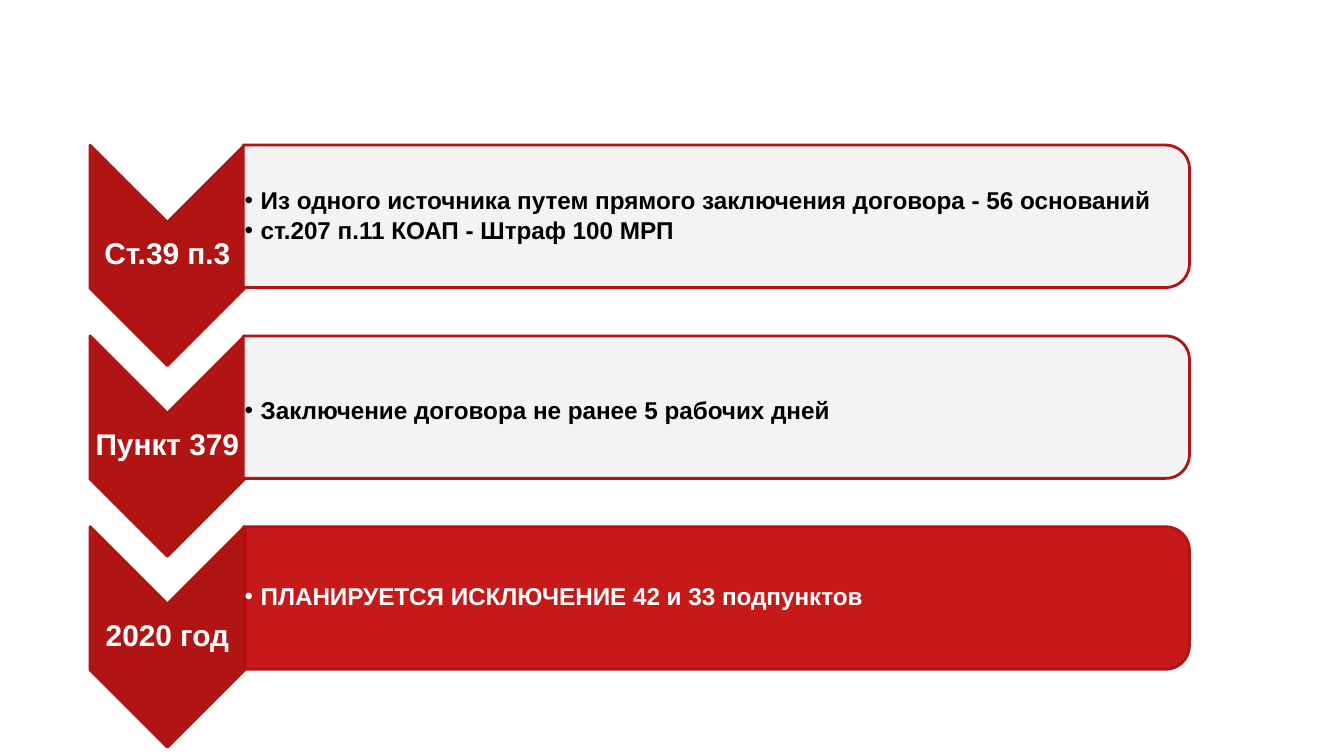
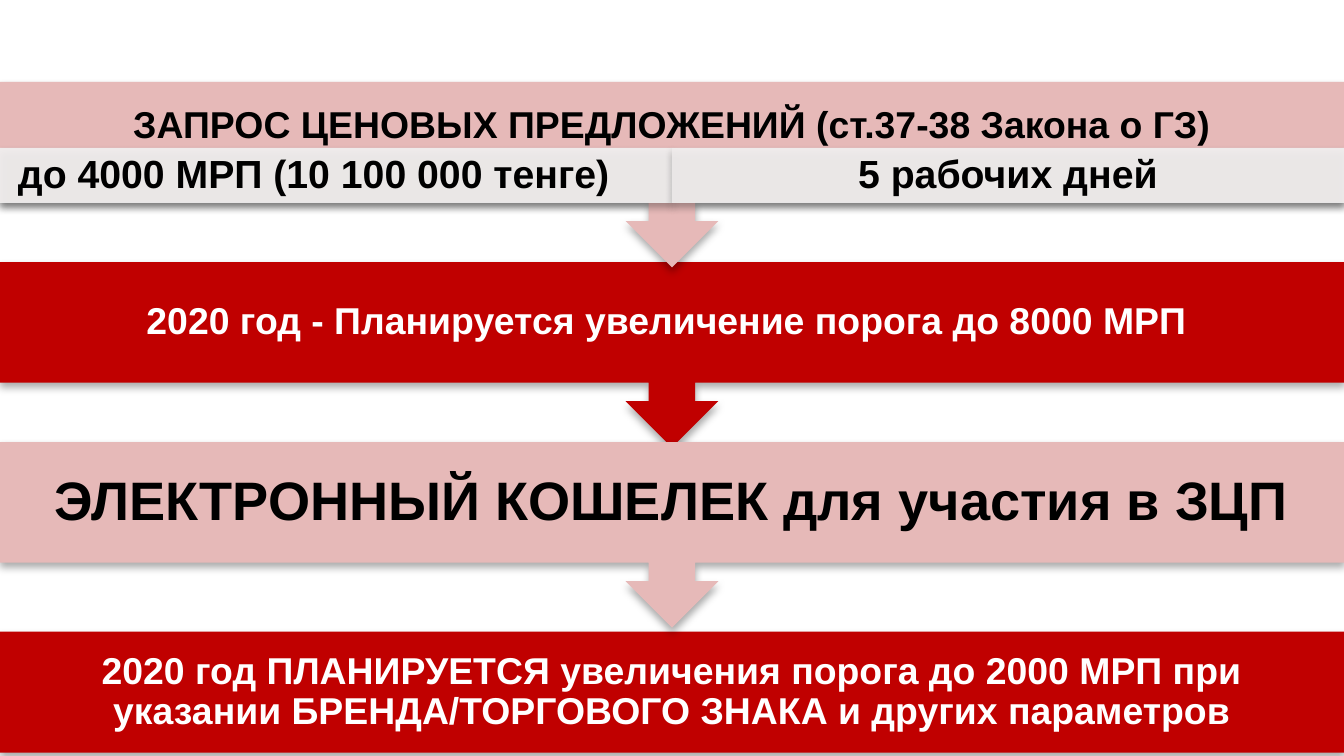
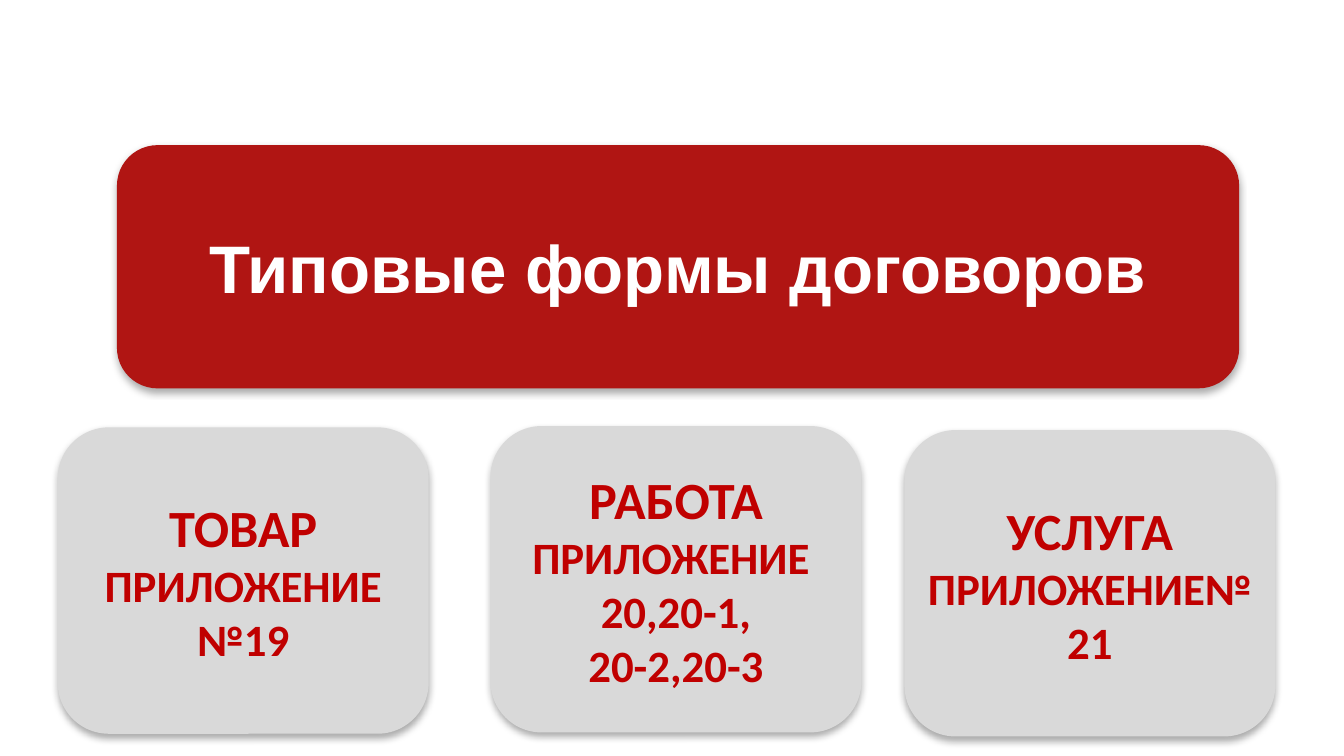
from itertools import chain, repeat

from lxml import etree
from pptx import Presentation
from pptx import util as u
from pptx.dml.color import RGBColor
from pptx.enum import shapes, text
from pptx.oxml import ns

CRIMSON, RED, PINK = "B01513", "C00000", "E6B9B8"
PALE, GREY, WHITE, BLACK = "F2F2F2", "D9D9D9", "FFFFFF", "000000"
SLIDE_WIDTH = 10

STEPS = [
    ("Ст.39 п.3", PALE, BLACK, 0, [
        "Из одного источника путем прямого заключения договора - 56 оснований",
        "ст.207 п.11 КОАП - Штраф 100 МРП",
    ]),
    ("Пункт 379", PALE, BLACK, 0.03, ["Заключение договора не ранее 5 рабочих дней"]),
    ("2020 год", RED, WHITE, 0, ["ПЛАНИРУЕТСЯ ИСКЛЮЧЕНИЕ 42 и 33 подпунктов"]),
]
STEP_TOP, STEP_PITCH, PANEL_HEIGHT = 1.08, 1.42, 1.06
CHEVRON_LENGTH, CHEVRON_WIDTH = 1.64, 1.15
STEP_LEFT, PANEL_LEFT, PANEL_WIDTH = 0.67, 1.81, 7.04

LAST_BAND = ("2020 год ПЛАНИРУЕТСЯ увеличения порога до 2000 МРП при указании "
             "БРЕНДА/ТОРГОВОГО ЗНАКА и других параметров")
ARROW_BANDS = [
    (1, "2020 год - Планируется увеличение порога до 8000 МРП ", RED, WHITE, 20, 0.9),
    (2, "ЭЛЕКТРОННЫЙ КОШЕЛЕК для участия в ЗЦП", PINK, BLACK, 29, 0.9),
    (0, "ЗАПРОС ЦЕНОВЫХ ПРЕДЛОЖЕНИЙ (ст.37-38 Закона о ГЗ)", PINK, BLACK, 20, 0.66),
]
BAND_TOP, BAND_PITCH, BAND_HEIGHT, CALLOUT_HEIGHT = 0.61, 1.34, 0.9, 1.38
LAST_BAND_TOP = 4.7
LIMITS = [("до 4000 МРП (10 100 000 тенге)", 0.33), ("5 рабочих дней", 0)]

CONTRACT_TITLE = "Типовые формы договоров"
CONTRACTS = [
    (0.43, 3.18, ["ТОВАР |ПРИЛОЖЕНИЕ №19"]),
    (3.65, 3.17, ["РАБОТА", "ПРИЛОЖЕНИЕ ", "20,20-1,", "20-2,20-3"]),
    (6.73, 3.2, ["УСЛУГА", "ПРИЛОЖЕНИЕ№ 21"]),
]


def color(value):
    return RGBColor.from_string(value)


def add_xml(parent, tag, **attributes):
    return etree.SubElement(parent, ns.qn(tag), attributes)


def add_figure(page, kind, left, top, width, height, fill, line=None,
               opacity=100, shadow=False):
    figure = page.shapes.add_shape(
        kind, u.Inches(left), u.Inches(top), u.Inches(width), u.Inches(height))
    figure.fill.solid()
    figure.fill.fore_color.rgb = color(fill)
    if opacity < 100:
        tone = figure.fill._xPr.find(".//" + ns.qn("a:srgbClr"))
        add_xml(tone, "a:alpha", val=str(opacity * 1000))
    if line:
        figure.line.color.rgb = color(line)
        figure.line.width = u.Pt(1.5)
    else:
        figure.line.fill.background()
    figure.shadow.inherit = False
    if shadow:
        effects = figure._element.spPr.find(ns.qn("a:effectLst"))
        outer = add_xml(effects, "a:outerShdw", blurRad=str(u.Pt(4)),
                        dist=str(u.Pt(2.2)), dir="5400000", rotWithShape="0")
        tone = add_xml(outer, "a:srgbClr", val=BLACK)
        add_xml(tone, "a:alpha", val="32000")
    return figure


def add_bullet(para):
    props = para._p.get_or_add_pPr()
    indent = u.Inches(0.12)
    props.set("marL", str(indent))
    props.set("indent", str(-indent))
    add_xml(props, "a:buFont", typeface="Arial")
    add_xml(props, "a:buChar", char="•")


def write(box, lines, sizes, ink, font="Arial", inset=0.01, spacing=0.9, bullets=False):
    frame = box.text_frame
    frame.word_wrap = True
    frame.vertical_anchor = text.MSO_ANCHOR.MIDDLE
    frame.margin_left = frame.margin_right = u.Inches(inset)
    frame.margin_top = frame.margin_bottom = u.Inches(inset)
    span_sizes = chain(sizes, repeat(sizes[-1]))
    for index, line in enumerate(lines):
        para = frame.add_paragraph() if index else frame.paragraphs[0]
        para.line_spacing = spacing
        para.alignment = text.PP_ALIGN.LEFT if bullets else text.PP_ALIGN.CENTER
        if bullets:
            para.space_before = u.Pt(2 if index else 0)
            add_bullet(para)
        for piece in line.split("|"):
            span = para.add_run()
            span.text = piece
            span.font.name = font
            span.font.size = u.Pt(next(span_sizes))
            span.font.bold = True
            span.font.color.rgb = color(ink)


def add_label(page, left, top, width, height, lines, sizes, ink, **style):
    box = page.shapes.add_textbox(
        u.Inches(left), u.Inches(top), u.Inches(width), u.Inches(height))
    write(box, lines, sizes, ink, **style)


def add_turned(page, kind, left, top, width, height, fill, opacity=100):
    figure = add_figure(page, kind, left + (width - height) / 2, top + (height - width) / 2,
                        height, width, fill, CRIMSON, opacity)
    figure.rotation = 90


def build_steps(page):
    for row, (name, fill, ink, drop, points) in enumerate(STEPS):
        top = STEP_TOP + row * STEP_PITCH
        add_turned(page, shapes.MSO_SHAPE.CHEVRON, STEP_LEFT, top,
                   CHEVRON_WIDTH, CHEVRON_LENGTH, CRIMSON)
        add_label(page, STEP_LEFT, top, CHEVRON_WIDTH, CHEVRON_LENGTH, [name], [16], WHITE)
        add_turned(page, shapes.MSO_SHAPE.ROUND_2_SAME_RECTANGLE, PANEL_LEFT, top,
                   PANEL_WIDTH, PANEL_HEIGHT, fill, opacity=90)
        add_label(page, PANEL_LEFT, top + drop, PANEL_WIDTH, PANEL_HEIGHT, points, [13], ink,
                  bullets=True)


def build_bands(page):
    last = add_figure(page, shapes.MSO_SHAPE.RECTANGLE, 0, LAST_BAND_TOP, SLIDE_WIDTH,
                      BAND_HEIGHT, RED, shadow=True)
    write(last, [LAST_BAND], [20], WHITE, inset=0.16)
    for row, caption, fill, ink, size, label_height in ARROW_BANDS:
        top = BAND_TOP + row * BAND_PITCH
        add_figure(page, shapes.MSO_SHAPE.DOWN_ARROW_CALLOUT, 0, top, SLIDE_WIDTH,
                   CALLOUT_HEIGHT, fill, shadow=True)
        add_label(page, 0, top, SLIDE_WIDTH, label_height, [caption], [size], ink, inset=0.16)
    width = SLIDE_WIDTH / len(LIMITS)
    for column, (caption, right_gap) in enumerate(LIMITS):
        left = column * width
        add_figure(page, shapes.MSO_SHAPE.RECTANGLE, left, 1.1, width, 0.41, PALE,
                   opacity=90, shadow=True)
        add_label(page, left, 1.1, width - right_gap, 0.41, [caption], [21], BLACK, inset=0.03)


def build_contracts(page):
    kind = shapes.MSO_SHAPE.ROUNDED_RECTANGLE
    title = add_figure(page, kind, 0.87, 1.08, 8.35, 1.81, CRIMSON, shadow=True)
    write(title, [CONTRACT_TITLE], [36], WHITE, inset=0.05, spacing=1.0)
    for left, top, lines in CONTRACTS:
        tile = add_figure(page, kind, left, top, 2.76, 2.28, GREY, shadow=True)
        write(tile, lines, [28, 24], RED, font="Calibri", inset=0.05, spacing=1.0)


def main():
    deck = Presentation()
    deck.slide_width = u.Inches(SLIDE_WIDTH)
    deck.slide_height = u.Inches(SLIDE_WIDTH * 9 / 16)
    for build in (build_steps, build_bands, build_contracts):
        build(deck.slides.add_slide(deck.slide_layouts[6]))
    deck.save("out.pptx")


if __name__ == "__main__":
    main()
